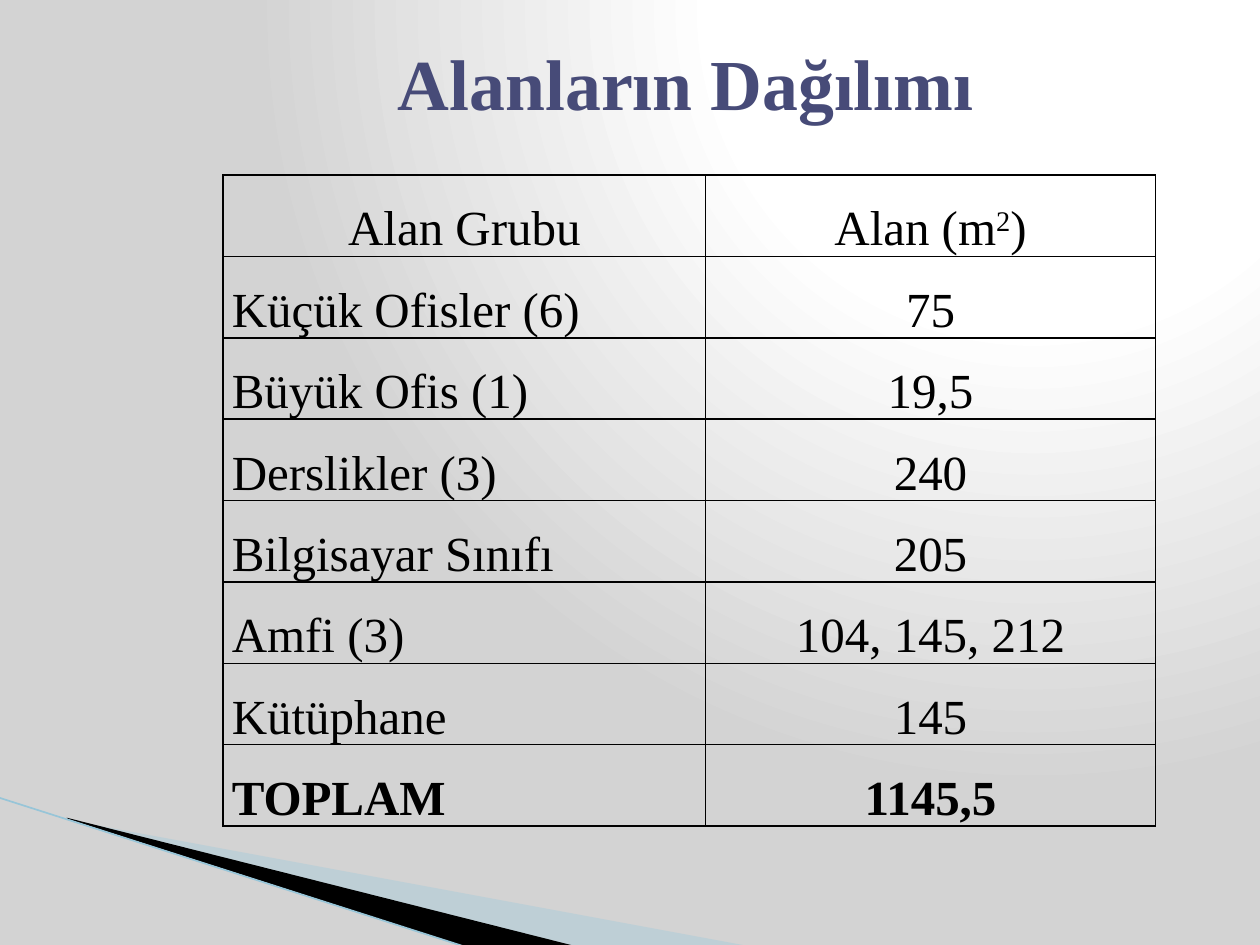
from lxml.etree import SubElement
from pptx import Presentation
from pptx.dml.color import RGBColor
from pptx.enum.shapes import MSO_CONNECTOR
from pptx.enum.text import MSO_ANCHOR, PP_ALIGN
from pptx.oxml import parse_xml
from pptx.oxml.ns import nsdecls, qn
from pptx.util import Inches, Pt

FONT = "Times New Roman"
TITLE = "Alanların Dağılımı"
ROWS = [
    ("Alan Grubu", "Alan (m|2|)"),
    ("Küçük Ofisler (6)", "75"),
    ("Büyük Ofis (1)", "19,5"),
    ("Derslikler (3)", "240"),
    ("Bilgisayar Sınıfı", "205"),
    ("Amfi (3)", "104, 145, 212"),
    ("Kütüphane", "145"),
    ("TOPLAM", "1145,5"),
]
COL_WIDTHS = (3.83, 3.57)
ROW_HEIGHT = 0.63
STOPS = [(0, "FFFFFF"), (40, "FFFFFF"), (100, "D3D3D3")]
WEDGES = [
    ("A0CBDC", 40, [(0.55, 6.51), (5.95, 7.51), (4.56, 7.51), (0.55, 6.5)]),
    ("000000", 100, [(0.53, 6.49), (4.57, 7.51), (3.72, 7.52), (0.54, 6.5)]),
]


def rgb(color):
    """Turn a hex string into a colour."""
    return RGBColor.from_string(color)


def set_background(s):
    """Fill the slide with a radial gradient centred at the upper right."""
    s.background.fill.solid()
    bg = s.background.fill._xPr
    stops = "".join(
        f'<a:gs pos="{pos * 1000}"><a:srgbClr val="{color}"/></a:gs>' for pos, color in STOPS
    )
    grad = parse_xml(
        f'<a:gradFill {nsdecls("a")} rotWithShape="1"><a:gsLst>{stops}</a:gsLst>'
        '<a:path path="circle"><a:fillToRect l="65000" t="0" r="0" b="98000"/></a:path></a:gradFill>'
    )
    bg.replace(bg.find(qn("a:solidFill")), grad)


def add_wedge(s, color, opacity, points):
    """Draw one filled wedge through the points."""
    corners = [(Inches(x), Inches(y)) for x, y in points]
    fb = s.shapes.build_freeform(*corners[0], scale=1.0)
    fb.add_line_segments(corners[1:], close=True)
    sp = fb.convert_to_shape()
    sp.shadow.inherit = False
    sp.line.fill.background()
    sp.fill.solid()
    sp.fill.fore_color.rgb = rgb(color)
    if opacity < 100:
        clr = sp.fill._xPr.find(qn("a:solidFill"))[0]
        SubElement(clr, qn("a:alpha"), val=str(opacity * 1000))


def add_line(s, x1, y1, x2, y2, color, width):
    """Draw a straight line without shadow."""
    line = s.shapes.add_connector(
        MSO_CONNECTOR.STRAIGHT, Inches(x1), Inches(y1), Inches(x2), Inches(y2)
    )
    line.line.color.rgb = rgb(color)
    line.line.width = Pt(width)
    SubElement(line._element.spPr, qn("a:effectLst"))


def write(tf, text, size=28, color="000000", bold=False, align=PP_ALIGN.LEFT, spacing=1.0):
    """Write one paragraph in which every second part between bars is raised."""
    p = tf.paragraphs[0]
    p.alignment = align
    p.line_spacing = spacing
    for i, part in enumerate(text.split("|")):
        r = p.add_run()
        r.text = part
        r.font.name = FONT
        r.font.size = Pt(size)
        r.font.bold = bold
        r.font.color.rgb = rgb(color)
        if i % 2:
            r.font._element.set("baseline", "30000")


def set_borders(cell, color="000000", width=1):
    """Outline a cell on all four sides."""
    tcPr = cell._tc.get_or_add_tcPr()
    for i, side in enumerate(("lnL", "lnR", "lnT", "lnB")):
        tcPr.insert(i, parse_xml(
            f'<a:{side} {nsdecls("a")} w="{Pt(width)}"><a:solidFill>'
            f'<a:srgbClr val="{color}"/></a:solidFill></a:{side}>'
        ))


def add_area_table(s, left, top):
    """Build the table of areas with a bold total row."""
    tbl = s.shapes.add_table(
        len(ROWS), len(COL_WIDTHS), Inches(left), Inches(top),
        Inches(sum(COL_WIDTHS)), Inches(ROW_HEIGHT * len(ROWS)),
    ).table
    tbl.first_row = tbl.horz_banding = False
    for col, width in zip(tbl.columns, COL_WIDTHS):
        col.width = Inches(width)
    for i, row in enumerate(ROWS):
        tbl.rows[i].height = Inches(ROW_HEIGHT)
        for j, text in enumerate(row):
            cell = tbl.cell(i, j)
            cell.margin_left = cell.margin_right = Inches(0.07)
            cell.margin_top = cell.margin_bottom = 0
            cell.fill.background()
            set_borders(cell)
            align = PP_ALIGN.JUSTIFY if i and not j else PP_ALIGN.CENTER
            write(cell.text_frame, text, bold=i == len(ROWS) - 1, align=align, spacing=1.5)


def main():
    """Build the slide and save it."""
    prs = Presentation()
    prs.slide_width, prs.slide_height = Inches(10), Inches(7.5)
    s = prs.slides.add_slide(prs.slide_layouts[6])
    set_background(s)
    for wedge in WEDGES:
        add_wedge(s, *wedge)
    add_line(s, -0.01, 6.33, 3.71, 7.52, "97C5D8", 0.95)
    add_area_table(s, 1.77, 1.39)
    tf = s.shapes.add_textbox(Inches(3.06), 0, Inches(6.44), Inches(1.3)).text_frame
    tf.word_wrap = True
    tf.vertical_anchor = MSO_ANCHOR.MIDDLE
    write(tf, TITLE, size=41, color="474B78", bold=True)
    prs.save("out.pptx")


if __name__ == "__main__":
    main()
